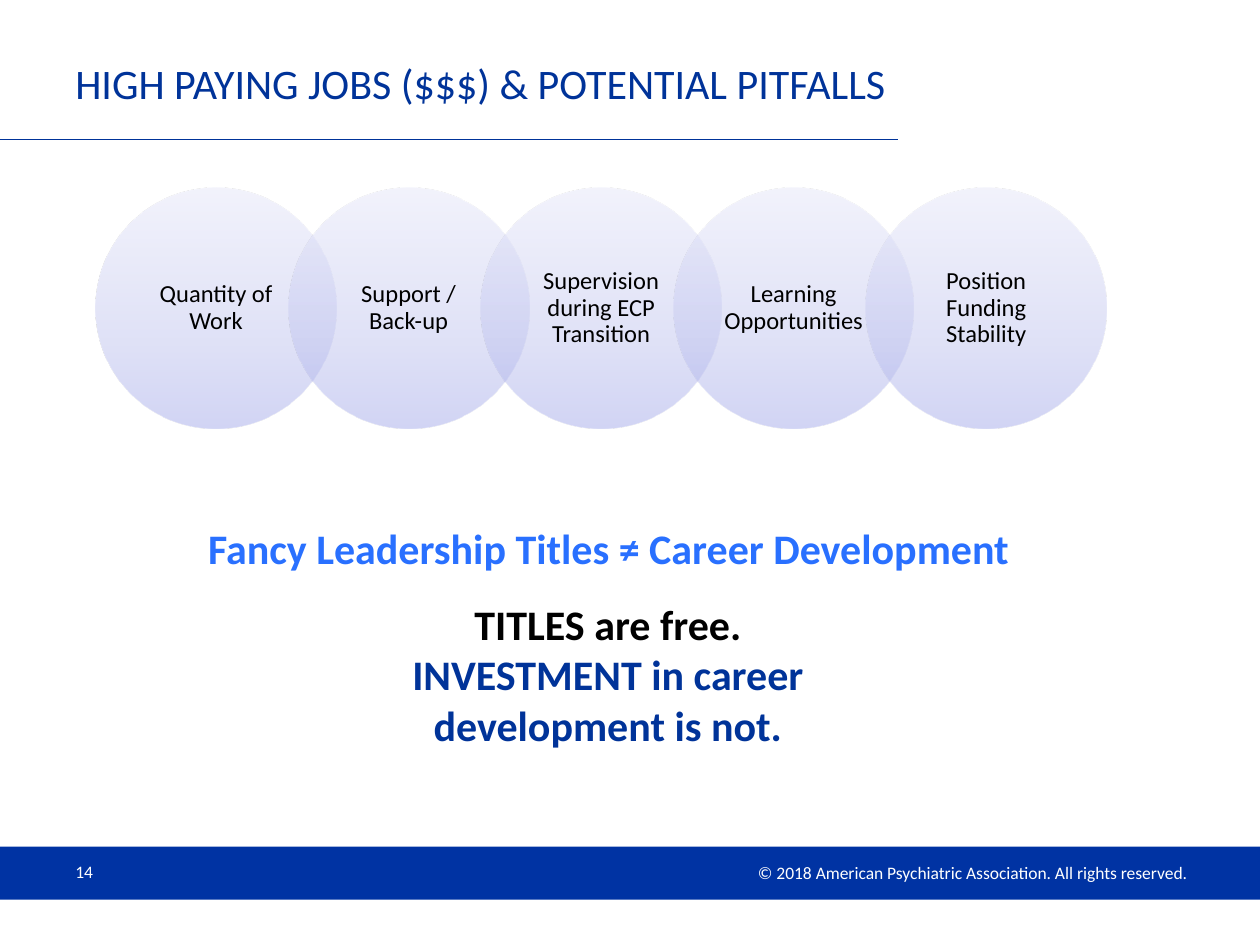
from pptx import Presentation
from pptx.dml.color import RGBColor
from pptx.enum.shapes import MSO_CONNECTOR, MSO_SHAPE
from pptx.enum.text import MSO_ANCHOR, PP_ALIGN
from pptx.oxml import parse_xml
from pptx.oxml.ns import nsdecls
from pptx.util import Inches, Pt

FONT = "Calibri"
COLORS = {
    "navy": "003399",
    "band": "0033A3",
    "bright": "2970FF",
    "black": "000000",
    "white": "FFFFFF",
}
CIRCLE_STOPS = [(0, "A5ABEB"), (35, "C1C5F0"), (100, "E7E8FA")]  # bottom to top
CIRCLE_OPACITY = 50

TITLE = "HIGH PAYING JOBS ($$$) & POTENTIAL PITFALLS"
PITFALLS = [
    "Quantity of Work",
    "Support / Back-up",
    "Supervision during ECP Transition",
    "Learning Opportunities",
    "Position Funding Stability",
]
HEADLINE = "Fancy Leadership Titles ≠ Career Development"
TAKEAWAY = [("TITLES are free. ", "black"),
            ("INVESTMENT in career development is not.", "navy")]
COPYRIGHT = "© 2018 American Psychiatric Association. All rights reserved. "
PAGE_NUMBER = "14"

CIRCLE_LEFT, CIRCLE_TOP, CIRCLE_SIZE = 0.76, 1.49, 1.91
CIRCLE_STEP = CIRCLE_SIZE * 0.8  # neighbours overlap by a fifth
LABEL_INSET = 0.28


def color(name):
    return RGBColor.from_string(COLORS[name])


def add_text(page, at, spans, size, align=PP_ALIGN.LEFT,
             anchor=MSO_ANCHOR.MIDDLE, bold=False):
    """Add a one-paragraph text box; spans are (text, color name) pairs."""
    box = page.shapes.add_textbox(*map(Inches, at))
    frame = box.text_frame
    frame.word_wrap = True
    frame.vertical_anchor = anchor
    para = frame.paragraphs[0]
    para.alignment = align
    for text, color_name in spans:
        span = para.add_run()
        span.text = text
        span.font.name = FONT
        span.font.size = Pt(size)
        span.font.bold = bold
        span.font.color.rgb = color(color_name)
    return frame


def add_circle(page, left):
    circle = page.shapes.add_shape(
        MSO_SHAPE.OVAL, Inches(left), Inches(CIRCLE_TOP),
        Inches(CIRCLE_SIZE), Inches(CIRCLE_SIZE))
    stops = "".join(
        f'<a:gs pos="{position * 1000}"><a:srgbClr val="{value}">'
        f'<a:alpha val="{CIRCLE_OPACITY * 1000}"/></a:srgbClr></a:gs>'
        for position, value in CIRCLE_STOPS)
    circle.element.spPr.append(parse_xml(
        f'<a:gradFill {nsdecls("a")} rotWithShape="1"><a:gsLst>{stops}</a:gsLst>'
        f'<a:lin ang="{270 * 60000}" scaled="0"/></a:gradFill>'))
    circle.line.fill.background()
    circle.shadow.inherit = False


def add_pitfall(page, index, label):
    left = CIRCLE_LEFT + index * CIRCLE_STEP
    add_circle(page, left)
    side = CIRCLE_SIZE - 2 * LABEL_INSET
    frame = add_text(
        page, (left + LABEL_INSET, CIRCLE_TOP + LABEL_INSET, side, side),
        [(label, "black")], 14, PP_ALIGN.CENTER)
    frame.margin_left = frame.margin_right = Inches(0.11)
    frame.margin_top = frame.margin_bottom = Inches(0.02)
    frame.paragraphs[0].line_spacing = 0.9


def add_frame(page):
    """Add the footer band and the rule under the title."""
    band = page.shapes.add_shape(
        MSO_SHAPE.RECTANGLE, 0, Inches(6.72), Inches(10), Inches(0.42))
    band.fill.solid()
    band.fill.fore_color.rgb = color("band")
    band.line.fill.background()
    band.shadow.inherit = False

    rule = page.shapes.add_connector(
        MSO_CONNECTOR.STRAIGHT, 0, Inches(1.11), Inches(7.13), Inches(1.11))
    rule.line.color.rgb = color("navy")
    rule.line.width = Pt(0.75)
    rule.element.spPr.append(parse_xml(f'<a:effectLst {nsdecls("a")}/>'))


def main():
    deck = Presentation()
    deck.slide_width, deck.slide_height = Inches(10), Inches(7.5)
    page = deck.slides.add_slide(deck.slide_layouts[6])

    add_frame(page)
    add_text(page, (5.18, 6.79, 4.37, 0.27), [(COPYRIGHT, "white")], 10,
             PP_ALIGN.RIGHT)
    add_text(page, (0.5, 6.72, 2.33, 0.4), [(PAGE_NUMBER, "white")], 10)
    add_text(page, (0.5, 0.34, 6.63, 0.64), [(TITLE, "navy")], 24)

    for index, label in enumerate(PITFALLS):
        add_pitfall(page, index, label)

    for at, spans in [((1.42, 4.1, 6.82, 0.5), [(HEADLINE, "bright")]),
                      ((3.11, 4.7, 3.43, 1.31), TAKEAWAY)]:
        add_text(page, at, spans, 24, PP_ALIGN.CENTER, MSO_ANCHOR.TOP, bold=True)

    deck.save("out.pptx")


if __name__ == "__main__":
    main()
